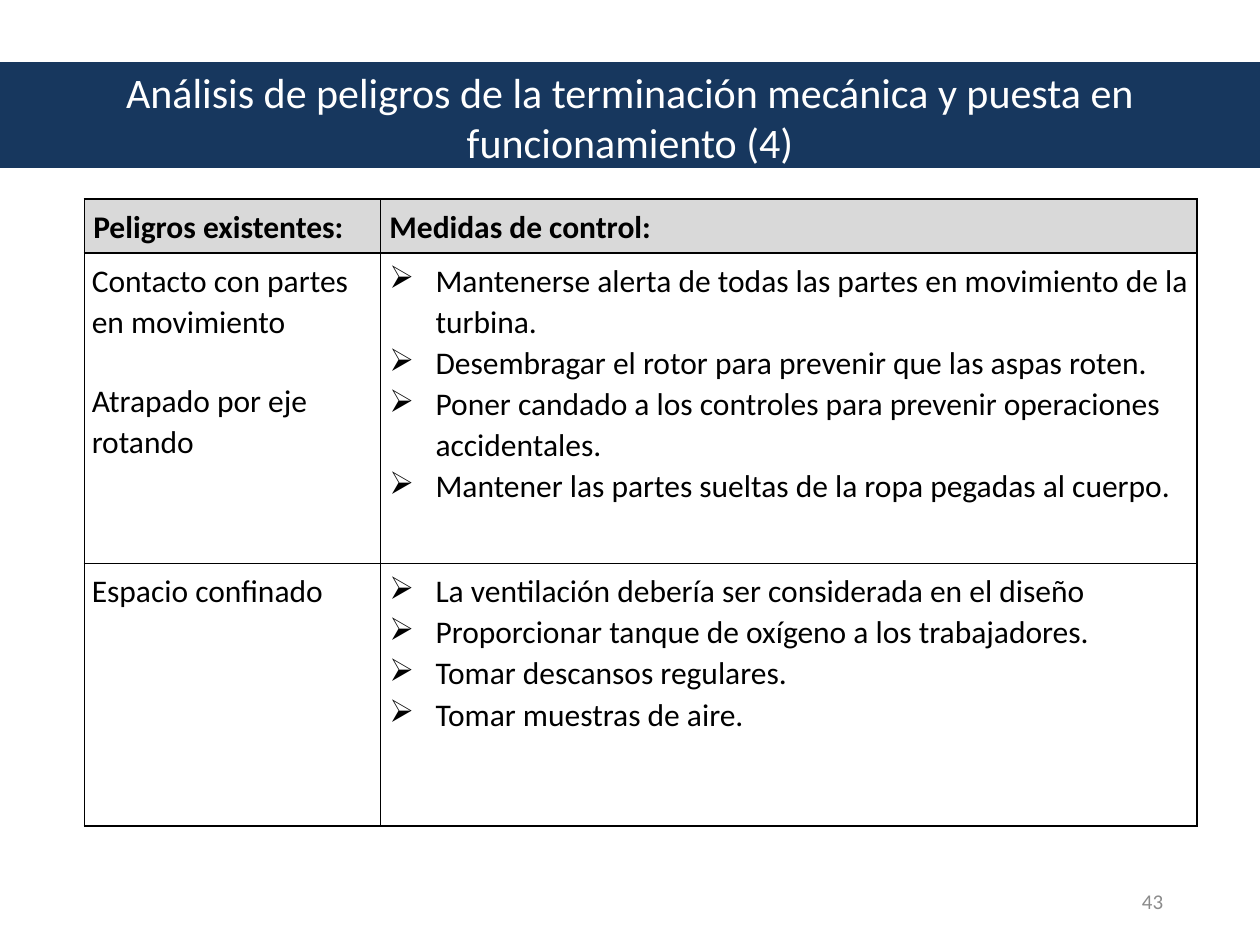
from lxml import etree
from pptx import Presentation
from pptx.dml.color import RGBColor
from pptx.enum.shapes import MSO_SHAPE
from pptx.enum.text import MSO_ANCHOR, PP_ALIGN
from pptx.oxml.ns import qn
from pptx.util import Cm, Pt

NAVY = RGBColor(0x17, 0x37, 0x5E)
WHITE = RGBColor(0xFF, 0xFF, 0xFF)
BLACK = RGBColor(0, 0, 0)
HEADER_GRAY = RGBColor(0xD9, 0xD9, 0xD9)
NUMBER_GRAY = RGBColor(0x8B, 0x8B, 0x8B)
FONT = "Calibri"

HEADERS = ["Peligros existentes:", "Medidas de control:"]
HAZARDS = [
    (["Contacto con partes en movimiento", "Atrapado por eje rotando"],
     ["Mantenerse alerta de todas las partes en movimiento de la turbina.",
      "Desembragar el rotor para prevenir que las aspas roten.",
      "Poner candado a los controles para prevenir operaciones accidentales.",
      "Mantener las partes sueltas de la ropa pegadas al cuerpo."]),
    (["Espacio confinado"],
     ["La ventilación debería ser considerada en el diseño",
      "Proporcionar tanque de oxígeno a los trabajadores.",
      "Tomar descansos regulares.",
      "Tomar muestras de aire."]),
]


def set_font(paragraph, size, color, bold=False):
    font = paragraph.font
    font.name, font.size, font.bold = FONT, Pt(size), bold
    font.color.rgb = color


def add_borders(cell):
    properties = cell._tc.get_or_add_tcPr()
    for index, side in enumerate(("lnL", "lnR", "lnT", "lnB")):
        line = etree.Element(qn(f"a:{side}"), w=str(Pt(0.96)))
        fill = etree.SubElement(line, qn("a:solidFill"))
        etree.SubElement(fill, qn("a:srgbClr"), val=str(BLACK))
        properties.insert(index, line)


presentation = Presentation()
presentation.slide_width, presentation.slide_height = Cm(25.4), Cm(19.05)
slide = presentation.slides.add_slide(presentation.slide_layouts[5])
shapes = slide.shapes

# Title on a full-width band
band = shapes.add_shape(MSO_SHAPE.RECTANGLE, 0, Cm(1.27), Cm(25.4), Cm(2.11))
band.shadow.inherit = False
band.fill.solid()
band.fill.fore_color.rgb = NAVY
band.line.color.rgb = NAVY
band.line.width = Pt(0.75)

title = shapes.title
title.left, title.top, title.width, title.height = Cm(1.27), Cm(0.76), Cm(22.86), Cm(3.18)
title.text_frame.text = "Análisis de peligros de la terminación mecánica y puesta en funcionamiento (4)"
title.text_frame.vertical_anchor = MSO_ANCHOR.MIDDLE
title.text_frame.paragraphs[0].alignment = PP_ALIGN.CENTER
set_font(title.text_frame.paragraphs[0], 24, WHITE)
band._element.addnext(title._element)  # title in front of the band

# Hazard table
table = shapes.add_table(3, 2, Cm(1.7), Cm(4.01), Cm(22.43), Cm(12.64)).table
table.horz_banding = False
for column, width in zip(table.columns, (5.97, 16.46)):
    column.width = Cm(width)
for row, height in zip(table.rows, (1.09, 6.26, 5.29)):
    row.height = Cm(height)

rows = [[[header] for header in HEADERS], *HAZARDS]
for row_index, row in enumerate(rows):
    is_header = row_index == 0
    for column_index, lines in enumerate(row):
        cell = table.cell(row_index, column_index)
        cell.margin_left = cell.margin_right = Cm(0.18 if is_header else 0.15)
        cell.margin_top = cell.margin_bottom = Cm(0.13)
        if is_header:
            cell.fill.solid()
            cell.fill.fore_color.rgb = HEADER_GRAY
        else:
            cell.fill.background()
        add_borders(cell)
        has_bullets = column_index == 1 and not is_header
        cell.text = "\n".join(lines)
        for line_index, paragraph in enumerate(cell.text_frame.paragraphs):
            paragraph.line_spacing = 1.07
            if has_bullets:
                properties = paragraph._p.get_or_add_pPr()
                properties.set("marL", str(Cm(0.96)))
                properties.set("indent", str(Cm(-0.93)))
                color = etree.SubElement(properties, qn("a:buClr"))
                etree.SubElement(color, qn("a:srgbClr"), val=str(BLACK))
                etree.SubElement(properties, qn("a:buChar"), char="➢")
            elif line_index > 0:
                paragraph.space_before = Pt(22)
            set_font(paragraph, 18, BLACK, bold=is_header)

# Page number
number = shapes.add_textbox(Cm(17.78), Cm(17.65), Cm(5.92), Cm(1.02)).text_frame
number.word_wrap = True
number.vertical_anchor = MSO_ANCHOR.MIDDLE
number.text = "43"
number.paragraphs[0].alignment = PP_ALIGN.RIGHT
set_font(number.paragraphs[0], 12, NUMBER_GRAY)

presentation.save("out.pptx")
